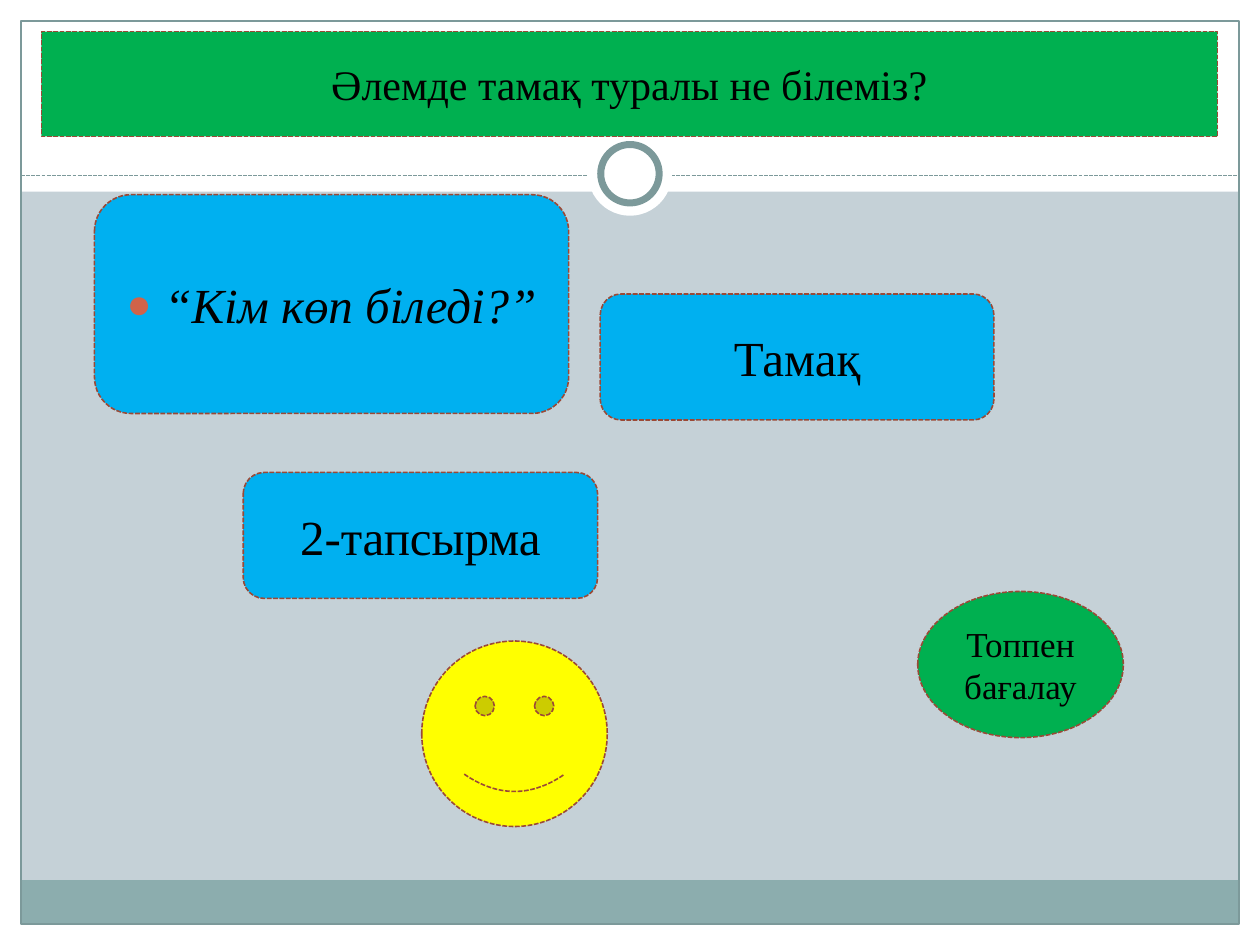
from lxml.etree import SubElement
from pptx import Presentation
from pptx.dml.color import RGBColor
from pptx.enum.dml import MSO_LINE_DASH_STYLE as DASH
from pptx.enum.shapes import MSO_CONNECTOR, MSO_SHAPE as SHAPE
from pptx.enum.text import MSO_ANCHOR, MSO_AUTO_SIZE, PP_ALIGN
from pptx.oxml.ns import qn
from pptx.util import Pt

WHITE = RGBColor(0xFF, 0xFF, 0xFF)
BLACK = RGBColor(0x00, 0x00, 0x00)
MIST = RGBColor(0xC5, 0xD1, 0xD7)
TEAL = RGBColor(0x8C, 0xAD, 0xAE)
SLATE = RGBColor(0x7C, 0x99, 0x9A)
RUST = RGBColor(0x9B, 0x49, 0x36)
GREEN = RGBColor(0x00, 0xB0, 0x50)
BLUE = RGBColor(0x00, 0xB0, 0xF0)
YELLOW = RGBColor(0xFF, 0xFF, 0x00)
BULLET = "D16349"
FONT = "Times New Roman"
WIDTH, HEIGHT = 720, 540
MARGIN = 12


def paint(sp, fill=None, line=None, weight=0.75, dash=None):
    if fill is None:
        sp.fill.background()
    else:
        sp.fill.solid()
        sp.fill.fore_color.rgb = fill
    if line is None:
        sp.line.fill.background()
        return
    sp.line.color.rgb = line
    sp.line.width = Pt(weight)
    if dash:
        sp.line.dash_style = dash


def add_shape(slide, kind, box, **style):
    sp = slide.shapes.add_shape(kind, *map(Pt, box))
    sp.shadow.inherit = False
    paint(sp, **style)
    return sp


def place(sp, box):
    for name, value in zip(("left", "top", "width", "height"), box):
        setattr(sp, name, Pt(value))


def write(sp, text, size, italic=False):
    tf = sp.text_frame
    for name, value in {"word_wrap": True, "auto_size": MSO_AUTO_SIZE.NONE,
                        "vertical_anchor": MSO_ANCHOR.MIDDLE}.items():
        setattr(tf, name, value)
    p = tf.paragraphs[0]
    p.alignment = PP_ALIGN.CENTER
    r = p.add_run()
    r.text = text
    for name, value in {"name": FONT, "size": Pt(size),
                        "italic": italic}.items():
        setattr(r.font, name, value)
    r.font.color.rgb = BLACK
    return p


def card_style(fill):
    return {"fill": fill, "line": RUST, "weight": 0.9, "dash": DASH.SQUARE_DOT}


def add_backdrop(slide, width, height):
    """White frame, footer band, dashed divider and ring."""
    slide.background.fill.solid()
    slide.background.fill.fore_color.rgb = MIST
    inner = width - 2 * MARGIN

    # White edges and footer band
    for box in ((0, height - MARGIN, width, MARGIN), (0, 0, width, 109.5),
                (0, 0, MARGIN, height), (width - MARGIN, 0, MARGIN, height)):
        add_shape(slide, SHAPE.RECTANGLE, box, fill=WHITE)
    add_shape(slide, SHAPE.RECTANGLE, (MARGIN, 503, inner, 25), fill=TEAL)
    add_shape(slide, SHAPE.RECTANGLE,
              (MARGIN, MARGIN, inner, height - 2 * MARGIN), line=SLATE)

    # Divider
    y = Pt(100.5)
    divider = slide.shapes.add_connector(
        MSO_CONNECTOR.STRAIGHT, Pt(MARGIN), y, Pt(width - MARGIN), y)
    divider.line.color.rgb = SLATE
    divider.line.width = Pt(0.75)
    divider.line.dash_style = DASH.SQUARE_DOT
    SubElement(divider.element.spPr, qn("a:effectLst"))

    # Ring on its white disc
    for size, style in ((48, {}), (33.4, {"line": SLATE, "weight": 4})):
        box = ((width - size) / 2, 99.3 - size / 2, size, size)
        add_shape(slide, SHAPE.OVAL, box, fill=WHITE, **style)


def add_title(slide, box):
    sp = slide.shapes.title
    slide.shapes.element.append(sp.element)  # in front of the backdrop
    place(sp, box)
    paint(sp, **card_style(GREEN))
    write(sp, "Әлемде тамақ туралы не білеміз?", 24)


def add_question(slide, box):
    sp = slide.placeholders[1]
    slide.shapes.element.append(sp.element)
    place(sp, box)
    geom = SubElement(sp.element.spPr, qn("a:prstGeom"), prst="roundRect")
    SubElement(geom, qn("a:avLst"))
    paint(sp, **card_style(BLUE))
    p = write(sp, "“Кім көп біледі?”", 28, italic=True)

    # Round coloured bullet with a hanging indent
    pPr = p._p.get_or_add_pPr()
    pPr.set("marL", str(Pt(21.6)))
    pPr.set("indent", str(-Pt(21.6)))
    color = SubElement(pPr, qn("a:buClr"))
    SubElement(color, qn("a:srgbClr"), val=BULLET)
    SubElement(pPr, qn("a:buSzPct"), val="85000")
    SubElement(pPr, qn("a:buFont"), typeface=FONT)
    SubElement(pPr, qn("a:buChar"), char="●")


def add_card(slide, kind, box, fill, text=None, size=28):
    sp = add_shape(slide, kind, box, **card_style(fill))
    if text:
        write(sp, text, size)


def main():
    prs = Presentation()
    prs.slide_width, prs.slide_height = Pt(WIDTH), Pt(HEIGHT)
    slide = prs.slides.add_slide(prs.slide_layouts[1])

    add_backdrop(slide, WIDTH, HEIGHT)
    add_title(slide, (23.7, 18, 672, 60))
    add_question(slide, (54, 111.3, 271, 125))
    add_card(slide, SHAPE.ROUNDED_RECTANGLE, (343, 168, 225, 72), BLUE, "Тамақ")
    add_card(slide, SHAPE.ROUNDED_RECTANGLE, (139, 270, 202.5, 72), BLUE,
             "2-тапсырма")
    add_card(slide, SHAPE.SMILEY_FACE, (241, 366.3, 106, 106), YELLOW)
    add_card(slide, SHAPE.OVAL, (524.4, 338, 117.5, 83.5), GREEN,
             "Топпен бағалау", 20)

    prs.save("out.pptx")


if __name__ == "__main__":
    main()
